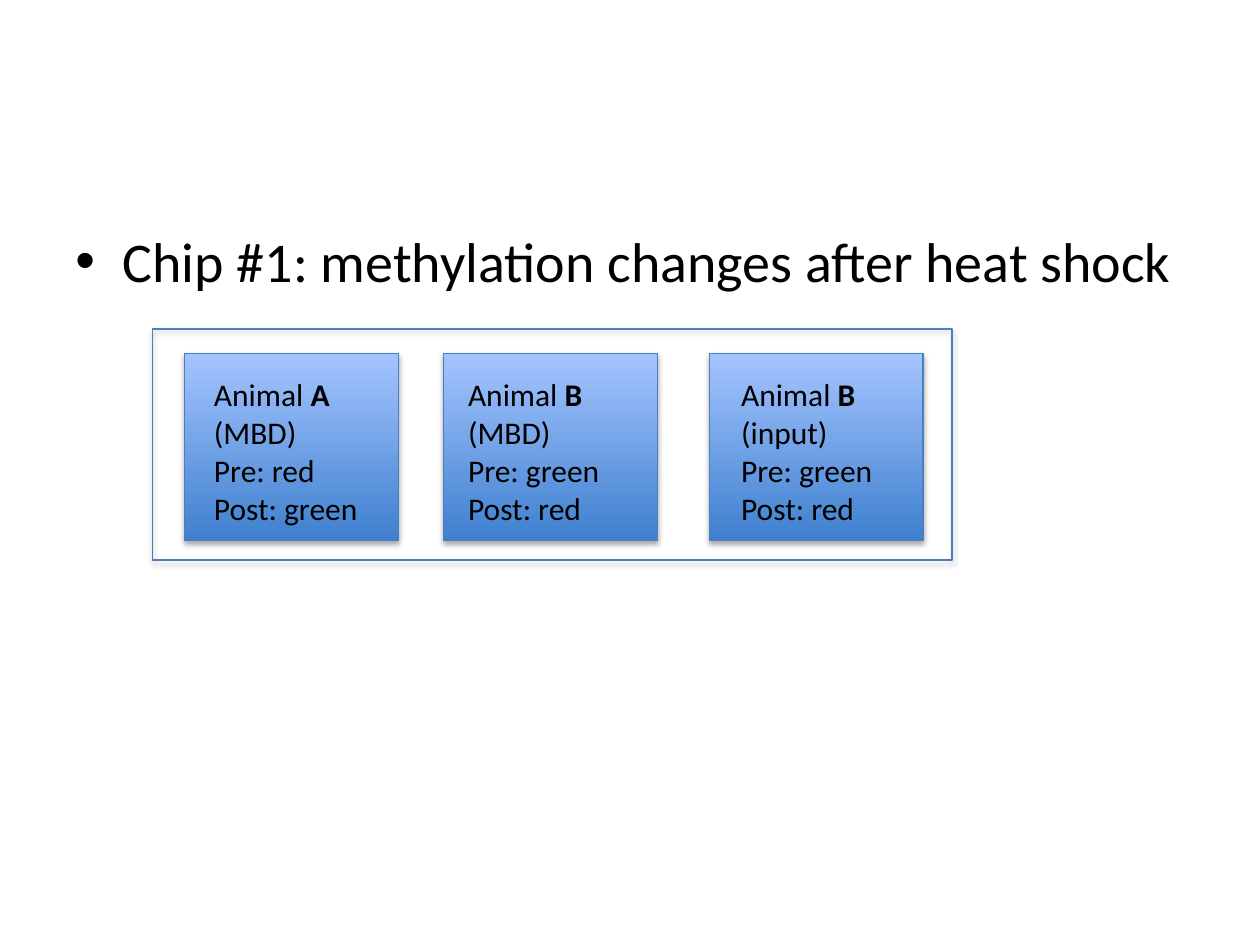
from lxml import etree
from pptx import Presentation
from pptx.dml.color import RGBColor
from pptx.enum.shapes import MSO_SHAPE
from pptx.enum.text import MSO_AUTO_SIZE
from pptx.oxml import parse_xml
from pptx.oxml.ns import nsdecls, qn
from pptx.util import Pt

RECT = MSO_SHAPE.RECTANGLE
GROW = MSO_AUTO_SIZE.SHAPE_TO_FIT_TEXT
BLACK = RGBColor(0, 0, 0)
EDGE = RGBColor(0x4B, 0x7E, 0xBC)
DEEP = RGBColor(0x3F, 0x80, 0xCE)
PALE = RGBColor(0xA4, 0xC4, 0xFF)

SHADOW = f"""<a:effectLst {nsdecls("a")}>
<a:outerShdw blurRad="{Pt(3.15)}" dist="{Pt(1.8)}" dir="5400000" rotWithShape="0">
<a:srgbClr val="000000"><a:alpha val="35000"/></a:srgbClr>
</a:outerShdw></a:effectLst>"""


def add_text(lines, left, top, width, height, size=18, grow=False, bullet=False):
    """Each line is a list of (text, bold) runs."""
    box = slide.shapes.add_textbox(Pt(left), Pt(top), Pt(width), Pt(height))
    frame = box.text_frame
    frame.word_wrap = True
    if grow:
        frame.auto_size = GROW
    for i, runs in enumerate(lines):
        para = frame.paragraphs[0] if i == 0 else frame.add_paragraph()
        for text, bold in runs:
            run = para.add_run()
            run.text = text
            font = run.font
            font.name, font.size, font.bold = "Calibri", Pt(size), bold
            font.color.rgb = BLACK
        if bullet:
            para.space_before = Pt(size * 0.2)
            props = para._p.get_or_add_pPr()
            props.set("marL", str(Pt(27)))
            props.set("indent", str(Pt(-27)))
            etree.SubElement(props, qn("a:buFont")).set("typeface", "Arial")
            etree.SubElement(props, qn("a:buChar")).set("char", "•")


def add_rect(left, top, width, height):
    rect = slide.shapes.add_shape(RECT, Pt(left), Pt(top), Pt(width), Pt(height))
    rect.shadow.inherit = False
    rect.line.color.rgb = EDGE
    rect.line.width = Pt(0.75)
    props = rect._element.spPr
    props.replace(props.find(qn("a:effectLst")), parse_xml(SHADOW))
    return rect


deck = Presentation()
deck.slide_width, deck.slide_height = Pt(720), Pt(540)
slide = deck.slides.add_slide(deck.slide_layouts[6])

add_text([[("Chip #1: methylation changes after heat shock", False)]],
         36, 126, 648, 356.4, size=32, bullet=True)

chip = add_rect(87, 188, 457, 132)
chip.fill.background()

# Box left, text left, lines
arrays = [
    (105.6, 115.2, [[("Animal ", False), ("A ", True), ("(MBD)", False)],
                    [("Pre: red", False)], [("Post: green", False)]]),
    (253.6, 260.4, [[("Animal ", False), ("B", True)], [("(MBD)", False)],
                    [("Pre: green", False)], [("Post: red", False)]]),
    (405.4, 416.4, [[("Animal ", False), ("B", True)], [("(input)", False)],
                    [("Pre: green", False)], [("Post: red", False)]]),
]

for left, _, _ in arrays:
    fill = add_rect(left, 202, 122, 107).fill
    fill.gradient()
    fill.gradient_angle = 90
    for stop, color, place in zip(fill.gradient_stops, (DEEP, PALE), (0, 1)):
        stop.color.rgb = color
        stop.position = place

for _, left, lines in arrays:
    add_text(lines, left, 211, 103, 116.6, grow=True)

deck.save("out.pptx")
